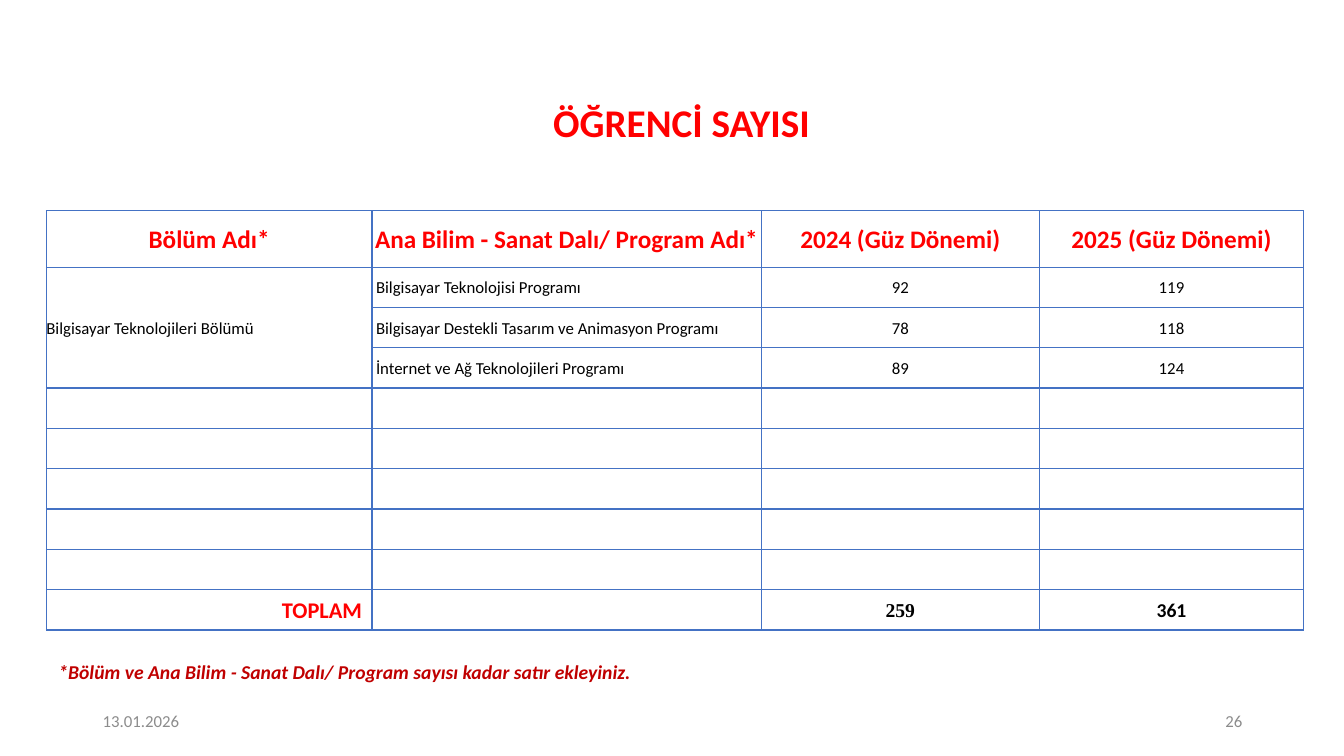
from lxml import etree
from pptx import Presentation
from pptx import util as u
from pptx.dml import color
from pptx.enum import text as t
from pptx.oxml import ns

RED = "FF0000"
GREY = "8C8C8C"
LEFT, MID, RIGHT = t.PP_ALIGN.LEFT, t.PP_ALIGN.CENTER, t.PP_ALIGN.RIGHT
COLS = [3.23, 3.86, 2.76, 2.62]
ROWS = [0.56] + [0.4] * 9
HEADS = ["Bölüm Adı*", "Ana Bilim - Sanat Dalı/ Program Adı*",
         "2024 (Güz Dönemi)", "2025 (Güz Dönemi)"]
DEPT = "Bilgisayar Teknolojileri Bölümü"
PROGS = [("Bilgisayar Teknolojisi Programı", 92, 119),
         ("Bilgisayar Destekli Tasarım ve Animasyon Programı", 78, 118),
         ("İnternet ve Ağ Teknolojileri Programı", 89, 124)]
NOTE = "*Bölüm ve Ana Bilim - Sanat Dalı/ Program sayısı kadar satır ekleyiniz."


def rgb(code):
    """Turn a hex string into a colour."""
    return color.RGBColor.from_string(code)


def write(frame, words, size=12, tint="000000", bold=False, italic=False,
          face="Calibri", align=LEFT, lead=1.0):
    """Put one formatted paragraph in a text frame."""
    para = frame.paragraphs[0]
    para.alignment, para.line_spacing = align, lead
    run = para.add_run()
    run.text = words
    font = run.font
    font.name, font.size = face, u.Pt(size)
    font.bold, font.italic = bold, italic
    font.color.rgb = rgb(tint)


def place(shape, left, top, width, height):
    """Move and size a shape in inches."""
    shape.left, shape.top = u.Inches(left), u.Inches(top)
    shape.width, shape.height = u.Inches(width), u.Inches(height)


def label(slide, words, left, top, width, height,
          anchor=t.MSO_ANCHOR.MIDDLE, **form):
    """Add a wrapped text box."""
    box = slide.shapes.add_textbox(0, 0, 0, 0)
    place(box, left, top, width, height)
    frame = box.text_frame
    frame.word_wrap = True
    frame.vertical_anchor = anchor
    write(frame, words, **form)


def border(cell, tint="4472C4"):
    """Draw a one point line on every side of a cell."""
    props = cell._tc.get_or_add_tcPr()
    for spot, side in enumerate(("lnL", "lnR", "lnT", "lnB")):
        line = etree.Element(ns.qn("a:" + side), w=str(u.Pt(1)))
        fill = etree.SubElement(line, ns.qn("a:solidFill"))
        etree.SubElement(fill, ns.qn("a:srgbClr"), val=tint)
        props.insert(spot, line)


def grid(slide):
    """Add the empty bordered table."""
    frame = slide.shapes.add_table(
        len(ROWS), len(COLS), u.Inches(0.46), u.Inches(2.09),
        u.Inches(sum(COLS)), u.Inches(sum(ROWS)))
    table = frame.table
    table.first_row = table.horz_banding = False
    for col, width in zip(table.columns, COLS):
        col.width = u.Inches(width)
    for row, height in zip(table.rows, ROWS):
        row.height = u.Inches(height)
    for cell in table.iter_cells():
        cell.margin_left = cell.margin_right = 0
        cell.margin_top = cell.margin_bottom = 0
        cell.vertical_anchor = t.MSO_ANCHOR.MIDDLE
        cell.fill.background()
        border(cell)
    return table


def fill(table):
    """Write the headings, student counts and totals."""
    def put(row, col, words, pad=0, **form):
        """Write one cell, with side padding in inches."""
        cell = table.cell(row, col)
        cell.margin_left = cell.margin_right = u.Inches(pad)
        write(cell.text_frame, str(words), lead=1.07, **form)

    for col, head in enumerate(HEADS):
        put(0, col, head, size=18, tint=RED, bold=True, align=MID)
    table.cell(1, 0).merge(table.cell(len(PROGS), 0))
    put(1, 0, DEPT)
    for row, (name, *counts) in enumerate(PROGS, 1):
        put(row, 1, name, pad=0.04)
        for col, count in enumerate(counts, 2):
            put(row, col, count, align=MID)
    last = len(ROWS) - 1
    put(last, 0, "TOPLAM", pad=0.1, size=16, tint=RED, bold=True, align=RIGHT)
    for col, face in ((2, "Times New Roman"), (3, "Calibri")):
        total = sum(prog[col - 1] for prog in PROGS)
        put(last, col, total, size=14, bold=True, face=face, align=MID)


def main():
    """Build and save the slide."""
    deck = Presentation()
    deck.slide_width, deck.slide_height = u.Inches(13.33), u.Inches(7.5)
    slide = deck.slides.add_slide(deck.slide_layouts[5])
    title = slide.shapes.title
    place(title, 0.73, 0.96, 12.06, 0.56)
    title.text_frame.vertical_anchor = t.MSO_ANCHOR.MIDDLE
    write(title.text_frame, "ÖĞRENCİ SAYISI", size=28, tint=RED, bold=True,
          align=MID, lead=0.9)
    label(slide, "13.01.2026", 0.92, 6.95, 3, 0.4, tint=GREY)
    label(slide, "26", 9.42, 6.95, 3, 0.4, tint=GREY, align=RIGHT)
    fill(grid(slide))
    label(slide, NOTE, 0.48, 6.5, 8.48, 0.34, anchor=t.MSO_ANCHOR.TOP,
          size=14, tint="C00000", bold=True, italic=True)
    deck.save("out.pptx")


if __name__ == "__main__":
    main()
